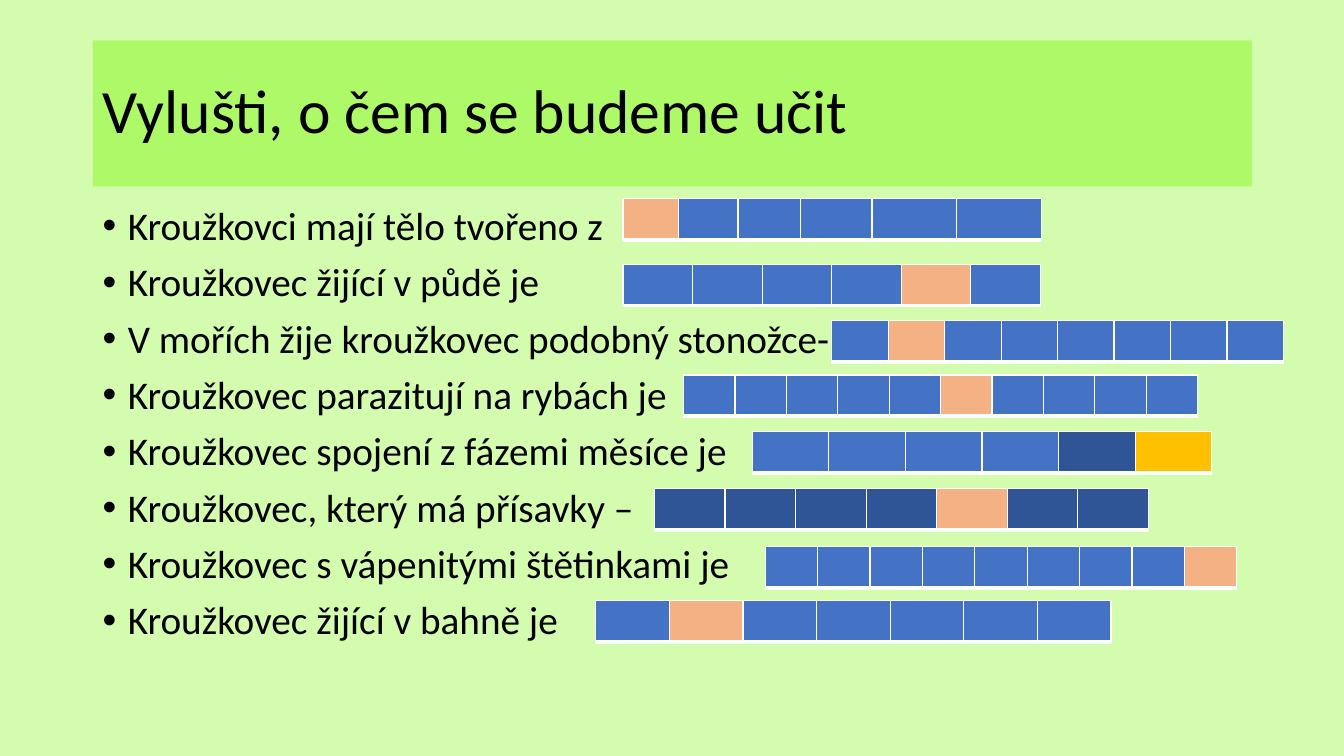
from lxml import etree
from pptx import Presentation
from pptx.dml.color import RGBColor
from pptx.enum.text import MSO_ANCHOR, MSO_AUTO_SIZE, PP_ALIGN
from pptx.oxml.ns import qn
from pptx.util import Inches, Pt

LEFT = PP_ALIGN.LEFT
MIDDLE = MSO_ANCHOR.MIDDLE
NO_AUTOFIT = MSO_AUTO_SIZE.NONE

BACKGROUND = RGBColor(0xD3, 0xFC, 0xAE)
GREEN = RGBColor(0xAD, 0xF9, 0x67)
BLACK = RGBColor(0x00, 0x00, 0x00)
WHITE = RGBColor(0xFF, 0xFF, 0xFF)
BLUE = RGBColor(0x44, 0x72, 0xC4)
NAVY = RGBColor(0x2F, 0x55, 0x97)
ORANGE = RGBColor(0xF4, 0xB1, 0x83)
GOLD = RGBColor(0xFF, 0xC0, 0x00)
CELL_COLOURS = {"b": BLUE, "n": NAVY, "o": ORANGE, "g": GOLD}

FONT = "Calibri"
ROW_HEIGHT = 0.41
BORDER_WIDTHS = {"a:lnL": 1, "a:lnR": 1, "a:lnT": 1, "a:lnB": 3}

TITLE = "Vylušti, o čem se budeme učit"
CLUES = [
    "Kroužkovci mají tělo tvořeno z",
    "Kroužkovec žijící v půdě je",
    "V mořích žije kroužkovec podobný stonožce-",
    "Kroužkovec parazitují na rybách je",
    "Kroužkovec spojení z fázemi měsíce je",
    "Kroužkovec, který má přísavky –",
    "Kroužkovec s vápenitými štětinkami je",
    "Kroužkovec žijící v bahně je",
]
ANSWER_ROWS = [
    (6.18, 1.97, "obbbbb", [0.55, 0.59, 0.62, 0.71, 0.84, 0.84]),
    (6.18, 2.62, "bbbbob", [0.69] * 6),
    (8.25, 3.18, "bobbbbbb", [0.56] * 8),
    (6.78, 3.72, "bbbbbobbbb", [0.51] * 10),
    (7.46, 4.28, "bbbbng", [0.76] * 6),
    (6.49, 4.85, "nnnnonn", [0.7] * 7),
    (7.59, 5.42, "bbbbbbbbo", [0.52] * 9),
    (5.91, 5.96, "bobbbbb", [0.73] * 7),
]


def format_para(para, size):
    para.alignment = LEFT
    para.line_spacing = 0.9
    for span in para.runs:
        span.font.name = FONT
        span.font.size = Pt(size)
        span.font.color.rgb = BLACK


def add_bullet(para):
    properties = para._p.get_or_add_pPr()
    properties.set("marL", str(Inches(0.25)))
    properties.set("indent", str(Inches(-0.25)))
    font = etree.SubElement(properties, qn("a:buFont"))
    font.set("typeface", "Arial")
    bullet = etree.SubElement(properties, qn("a:buChar"))
    bullet.set("char", "•")


def format_title(page):
    title = page.shapes.title
    title.left, title.top = Inches(0.92), Inches(0.4)
    title.width, title.height = Inches(11.5), Inches(1.45)
    title.fill.solid()
    title.fill.fore_color.rgb = GREEN
    frame = title.text_frame
    frame.text = TITLE
    frame.auto_size = NO_AUTOFIT
    frame.vertical_anchor = MIDDLE
    format_para(frame.paragraphs[0], 44)


def add_clues(page):
    box = page.shapes.add_textbox(Inches(0.92), Inches(2), Inches(11.5), Inches(4.76))
    frame = box.text_frame
    frame.word_wrap = True
    frame.text = "\n".join(CLUES)
    for para in frame.paragraphs:
        format_para(para, 28)
        para.space_before = Pt(10)
        add_bullet(para)


def add_borders(cell):
    properties = cell._tc.get_or_add_tcPr()
    for tag, width in BORDER_WIDTHS.items():
        line = etree.SubElement(properties, qn(tag))
        line.set("w", str(Pt(width)))
        fill = etree.SubElement(line, qn("a:solidFill"))
        etree.SubElement(fill, qn("a:srgbClr")).set("val", str(WHITE))


def add_answer_row(page, left, top, colours, widths):
    frame = page.shapes.add_table(
        1, len(widths), Inches(left), Inches(top), Inches(sum(widths)), Inches(ROW_HEIGHT)
    )
    table = frame.table
    for column, width, colour in zip(table.columns, widths, colours):
        column.width = Inches(width)
    for cell, colour in zip(table.rows[0].cells, colours):
        add_borders(cell)
        cell.fill.solid()
        cell.fill.fore_color.rgb = CELL_COLOURS[colour]


def main():
    deck = Presentation()
    deck.slide_width, deck.slide_height = Inches(13.33), Inches(7.5)
    page = deck.slides.add_slide(deck.slide_layouts[5])
    page.background.fill.solid()
    page.background.fill.fore_color.rgb = BACKGROUND
    format_title(page)
    add_clues(page)
    for answer_row in ANSWER_ROWS:
        add_answer_row(page, *answer_row)
    deck.save("out.pptx")


if __name__ == "__main__":
    main()
